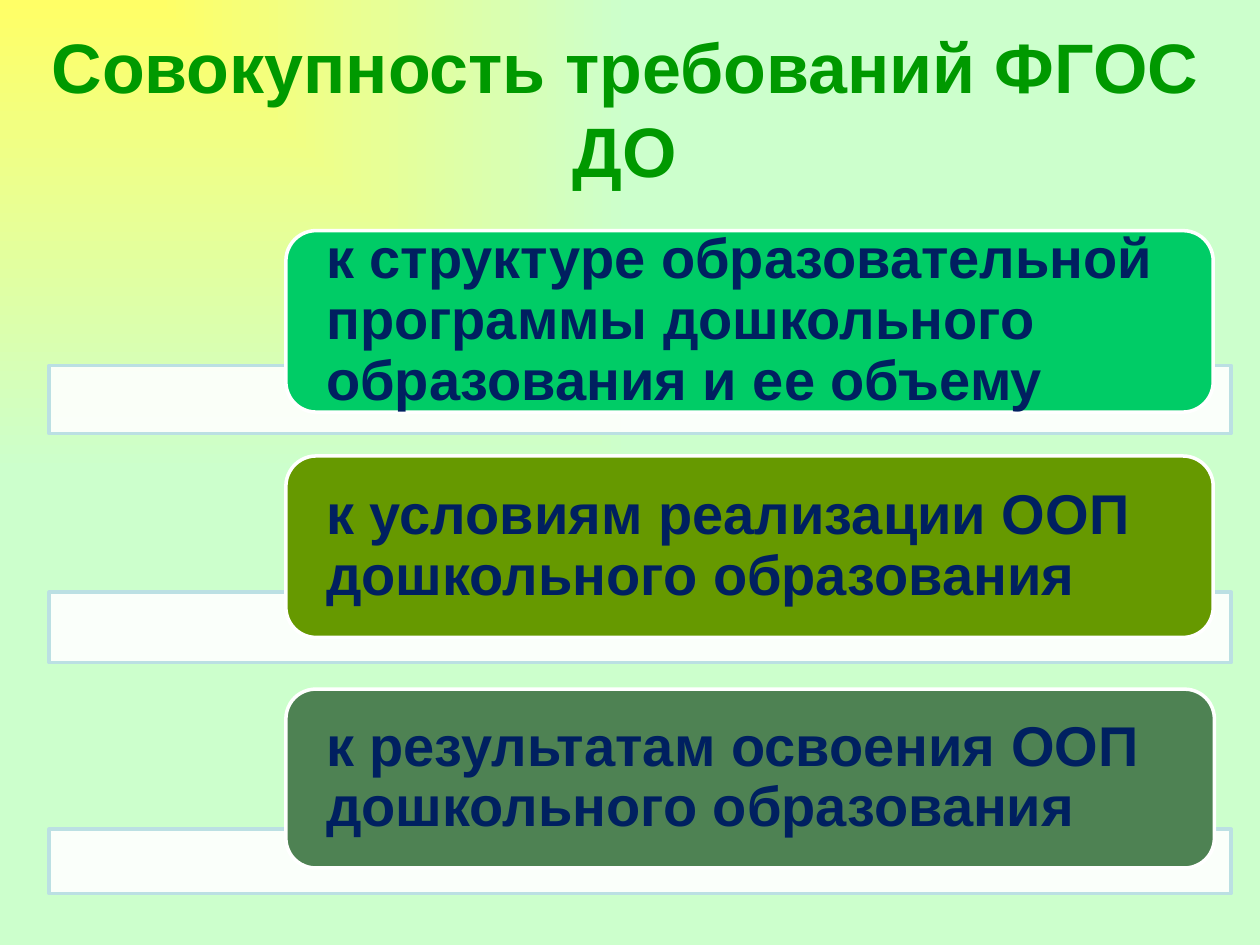
from lxml import etree
from pptx import Presentation
from pptx.dml.color import RGBColor
from pptx.enum.shapes import MSO_SHAPE
from pptx.enum.text import MSO_ANCHOR, PP_ALIGN
from pptx.oxml.ns import qn
from pptx.util import Pt

RECT = MSO_SHAPE.RECTANGLE
ROUND = MSO_SHAPE.ROUNDED_RECTANGLE
MIDDLE = MSO_ANCHOR.MIDDLE
LEFT, CENTER = PP_ALIGN.LEFT, PP_ALIGN.CENTER

COLORS = {
    "yellow": "FFFF66", "mint": "CCFFCC", "title": "009900", "text": "002060",
    "white": "FFFFFF", "bar_line": "BBE0E3",
    "structure": "00CC66", "conditions": "669900", "results": "4E8253",
}


def rgb(name):
    return RGBColor.from_string(COLORS[name])


def write(sp, text, size, color, align=LEFT, spacing=1.0, margin_x=7.2, margin_y=3.6):
    tf = sp.text_frame
    tf.word_wrap = True
    tf.vertical_anchor = MIDDLE
    tf.margin_left = tf.margin_right = Pt(margin_x)
    tf.margin_top = tf.margin_bottom = Pt(margin_y)
    p = tf.paragraphs[0]
    p.alignment = align
    p.line_spacing = spacing
    r = p.add_run()
    r.text = text
    r.font.name = "Arial"
    r.font.size = Pt(size)
    r.font.bold = True
    r.font.color.rgb = rgb(color)


prs = Presentation()
prs.slide_width, prs.slide_height = Pt(720), Pt(540)
s = prs.slides.add_slide(prs.slide_layouts[6])

fill = s.background.fill
fill.gradient()
for stop, color, position in zip(fill.gradient_stops, ("yellow", "mint"), (0, 1)):
    stop.color.rgb = rgb(color)
    stop.position = position
grad = s.background._cSld.find(".//" + qn("a:gradFill"))
grad.remove(grad.find(qn("a:lin")))
shade = etree.SubElement(grad, qn("a:path"), {"path": "rect"})
etree.SubElement(shade, qn("a:fillToRect"), {"r": "100000", "b": "100000"})

title = s.shapes.add_textbox(Pt(22.3), Pt(16.6), Pt(669.6), Pt(90))
write(title, "Совокупность требований ФГОС ДО", 40, "title", align=CENTER)

requirements = [
    ("к структуре образовательной программы дошкольного образования и ее объему",
     "structure", 208.8, 38.9, 131.8, 529.9, 103.7),
    ("к условиям реализации ООП дошкольного образования",
     "conditions", 338.4, 40.3, 260.6, 529.9, 103.7),
    ("к результатам освоения ООП дошкольного образования",
     "results", 473.8, 36.7, 393.8, 530.6, 102.2),
]
for text, color, bar_top, bar_height, top, width, height in requirements:
    bar = s.shapes.add_shape(RECT, Pt(28.1), Pt(bar_top), Pt(675.4), Pt(bar_height))
    card = s.shapes.add_shape(ROUND, Pt(163.4), Pt(top), Pt(width), Pt(height))
    for sp, fill_color, line_color in ((bar, "white", "bar_line"), (card, color, "white")):
        sp.shadow.inherit = False
        sp.fill.solid()
        sp.fill.fore_color.rgb = rgb(fill_color)
        sp.line.color.rgb = rgb(line_color)
        sp.line.width = Pt(2)
    bar_color = bar._element.spPr.find(qn("a:solidFill")).find(qn("a:srgbClr"))
    etree.SubElement(bar_color, qn("a:alpha"), {"val": "90000"})
    write(card, text, 32, "text", spacing=0.9, margin_x=18, margin_y=0)

prs.save("out.pptx")
